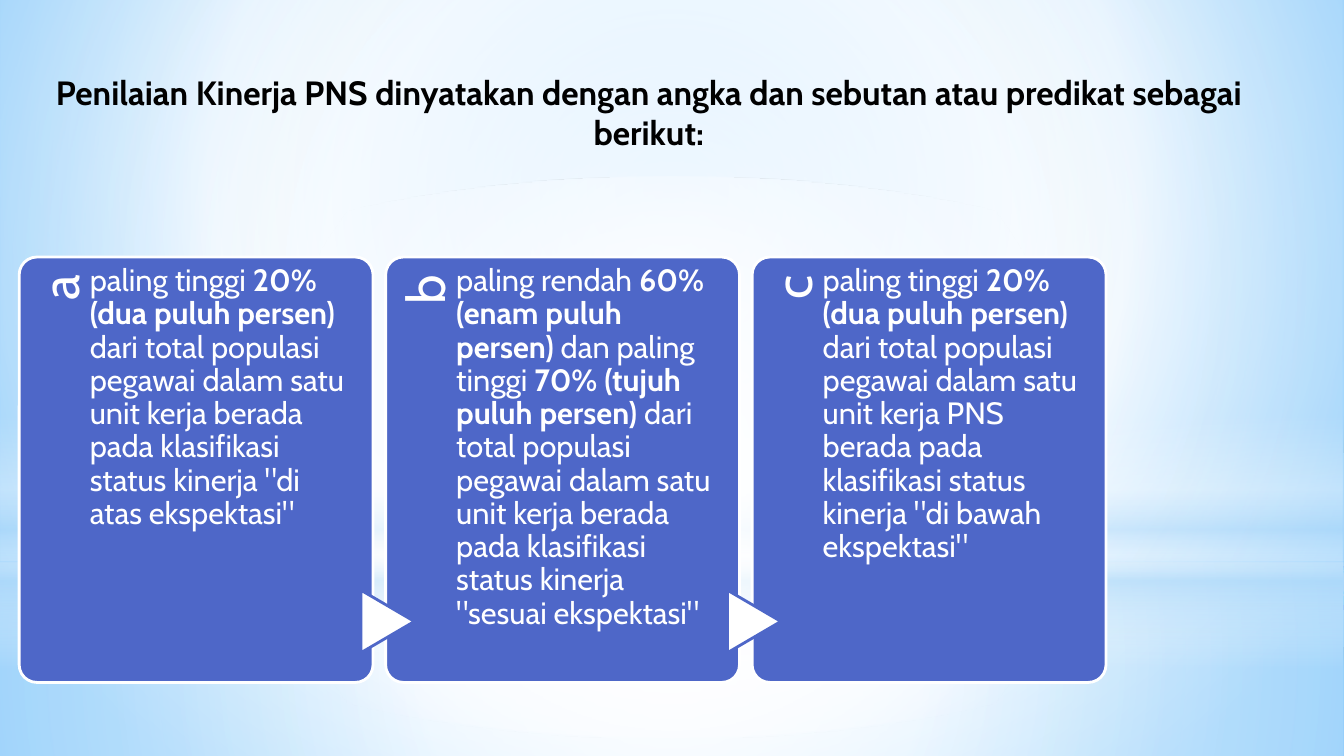
from lxml import etree
from pptx import Presentation
from pptx import util as u
from pptx.dml.color import RGBColor
from pptx.enum import shapes, text
from pptx.oxml.ns import nsdecls, qn

COLORS = {"white": "FFFFFF", "black": "000000", "card": "4E67C8",
          "haze": "B4DCFA", "sky": "9ED5FF", "deep_sky": "5BB9FF"}
FONT = "Cabin"
CENTER = (50, 50, 50, 50)
CARDS = [
    ("a", [("paling tinggi ", False), ("20% (dua puluh persen) ", True),
           ("dari total populasi pegawai dalam satu unit kerja berada pada "
            "klasifikasi status kinerja \"di atas ekspektasi\"", False)]),
    ("b", [("paling rendah ", False), ("60% (enam puluh persen) ", True),
           ("dan paling tinggi ", False), ("70% (tujuh puluh persen) ", True),
           ("dari total populasi pegawai dalam satu unit kerja berada pada "
            "klasifikasi status kinerja \"sesuai ekspektasi\"", False)]),
    ("c", [("paling tinggi ", False), ("20% (dua puluh persen) ", True),
           ("dari total populasi pegawai dalam satu unit kerja PNS berada pada "
            "klasifikasi status kinerja \"di bawah ekspektasi\"", False)]),
]


def rgb(name):
    return RGBColor.from_string(COLORS[name])


def inches(*lengths):
    return [u.Inches(length) for length in lengths]


def apply_gradient(parent, stops, focus=None):
    stop_xml = "".join(
        f'<a:gs pos="{pos * 1000}"><a:srgbClr val="{COLORS[color]}">'
        f'<a:alpha val="{alpha * 1000}"/></a:srgbClr></a:gs>'
        for pos, color, alpha in stops)
    if focus:
        sides = " ".join(f'{side}="{part * 1000}"' for side, part in zip("ltrb", focus))
        direction = f'<a:path path="circle"><a:fillToRect {sides}/></a:path>'
    else:
        direction = '<a:lin ang="5400000" scaled="0"/>'
    gradient = etree.fromstring(
        f'<a:gradFill {nsdecls("a")} rotWithShape="1"><a:gsLst>{stop_xml}</a:gsLst>'
        f'{direction}</a:gradFill>')
    parent.replace(parent.find(qn("a:solidFill")), gradient)


def add_figure(slide, kind, box, fill, line=None):
    figure = slide.shapes.add_shape(kind, *inches(*box))
    figure.shadow.inherit = False
    figure.fill.solid()
    figure.fill.fore_color.rgb = rgb(fill)
    if line:
        figure.line.color.rgb = rgb(line)
        figure.line.width = u.Pt(2)
    else:
        figure.line.fill.background()
    return figure


def add_text(slide, box, pieces, size, color, align, margins):
    label = slide.shapes.add_textbox(*inches(*box))
    frame = label.text_frame
    frame.word_wrap = True
    frame.vertical_anchor = text.MSO_ANCHOR.TOP
    (frame.margin_left, frame.margin_top,
     frame.margin_right, frame.margin_bottom) = inches(*margins)
    paragraph = frame.paragraphs[0]
    paragraph.alignment = align
    for words, bold in pieces:
        run = paragraph.add_run()
        run.text = words
        run.font.name = FONT
        run.font.size = u.Pt(size)
        run.font.bold = bold
        run.font.color.rgb = rgb(color)
    return label


def draw_backdrop(slide, width, height):
    slide.background.fill.solid()
    apply_gradient(slide.element.find(".//" + qn("p:bgPr")),
                   [(0, "sky", 100), (60, "white", 100), (100, "deep_sky", 100)],
                   (20, 10, 20, 60))
    rectangle, oval = shapes.MSO_SHAPE.RECTANGLE, shapes.MSO_SHAPE.OVAL
    horizon = 5.58
    layers = [
        (rectangle, horizon, height - horizon,
         [(0, "white", 91), (37, "white", 76), (100, "haze", 79)], CENTER),
        (rectangle, 0, horizon,
         [(0, "white", 89), (48, "white", 62), (100, "haze", 79)], CENTER),
        (rectangle, 4.12, 2.5,
         [(0, "white", 0), (29, "white", 30), (45, "haze", 40),
          (55, "white", 26), (65, "haze", 60), (100, "white", 0)], None),
        (oval, 1.75, horizon, [(0, "white", 100), (56, "white", 0)], CENTER),
    ]
    for kind, top, depth, stops, focus in layers:
        layer = add_figure(slide, kind, (0, top, width, depth), "white")
        apply_gradient(layer.element.spPr, stops, focus)


def draw_title(slide, box):
    title = "Penilaian Kinerja PNS dinyatakan dengan angka dan sebutan atau predikat sebagai berikut:"
    add_text(slide, box, [(title, True)], 24, "black",
             text.PP_ALIGN.CENTER, (0.1, 0.05, 0.1, 0.05))


def draw_card(slide, box, letter, pieces, has_arrow):
    left, top, width, height = box
    strip, strip_length = 0.7, 3.46
    card = add_figure(slide, shapes.MSO_SHAPE.ROUNDED_RECTANGLE, box, "card", "white")
    card.adjustments[0] = 0.05
    marker = add_text(slide, (left + (strip - strip_length) / 2,
                              top + (strip_length - strip) / 2, strip_length, strip),
                      [(letter, False)], 38, "white",
                      text.PP_ALIGN.RIGHT, (0, 0.14, 0.18, 0))
    marker.rotation = 270
    if has_arrow:
        arrow = add_figure(slide, shapes.MSO_SHAPE.FLOWCHART_EXTRACT,
                           (left - 0.29, top + 3.35, 0.62, 0.53), "white", "card")
        arrow.rotation = 90
    body = add_text(slide, (left + strip, top, 2.62, height), pieces, 22, "white",
                    text.PP_ALIGN.LEFT, (0, 0.08, 0, 0))
    for label in (marker, body):
        label.text_frame.paragraphs[0].line_spacing = 0.9


def draw_cards(slide, box):
    left, top, width, height = box
    card_width = 3.51
    pitch = (width - card_width) / (len(CARDS) - 1)
    for index, (letter, pieces) in enumerate(CARDS):
        draw_card(slide, (left + index * pitch, top, card_width, height),
                  letter, pieces, index > 0)


def main():
    deck = Presentation()
    deck.slide_width, deck.slide_height = inches(13.33, 7.5)
    slide = deck.slides.add_slide(deck.slide_layouts[6])
    draw_backdrop(slide, 13.33, 7.5)
    draw_title(slide, (0.4, 0.66, 12.07, 0.91))
    draw_cards(slide, (0.19, 2.55, 10.78, 4.22))
    deck.save("out.pptx")


if __name__ == "__main__":
    main()
